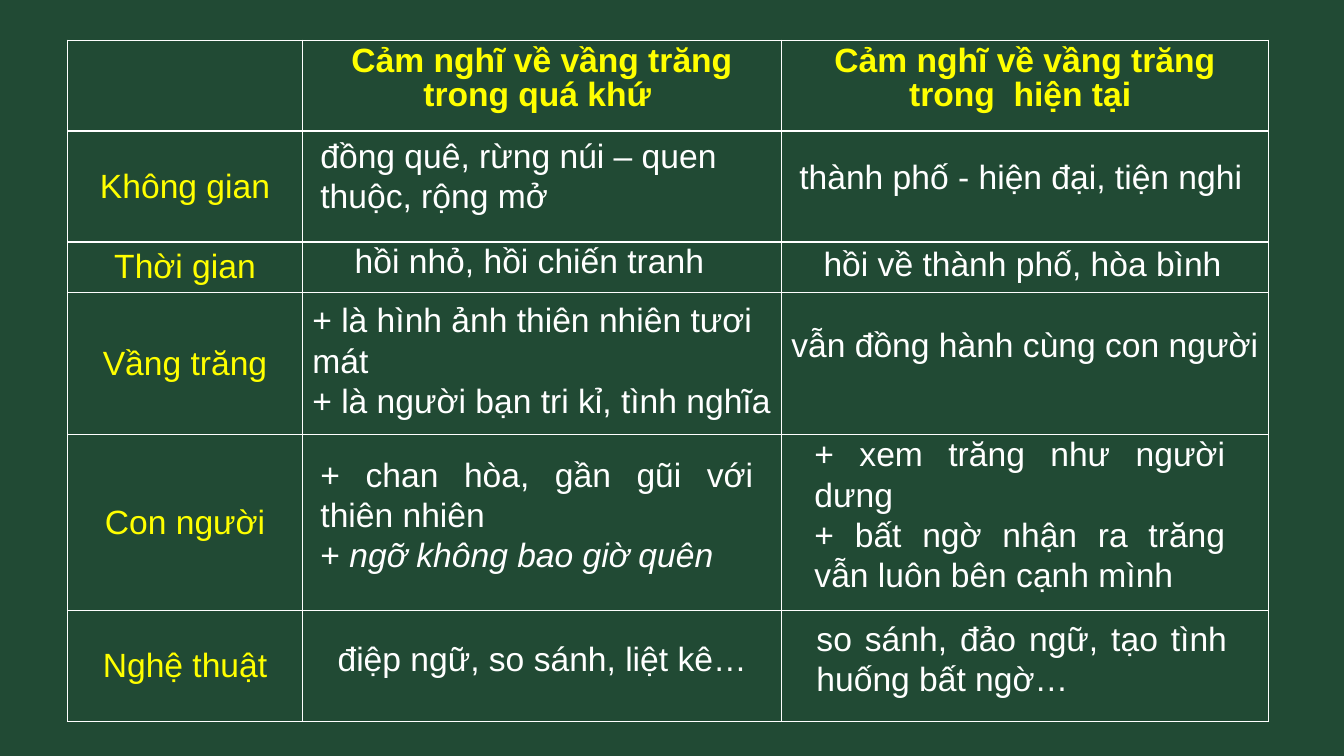
from lxml import etree
from pptx import Presentation
from pptx.dml.color import RGBColor
from pptx.enum.text import MSO_ANCHOR, MSO_AUTO_SIZE, PP_ALIGN
from pptx.oxml.ns import qn
from pptx.util import Pt

PX = 9144
COLORS = {"board": "214A34", "heading": "FFFF00", "chalk": "FFFFFF"}
FONT = "Arial"
TEXT_SIZE = 24
BORDER_WIDTH = 1

TABLE_LEFT, TABLE_TOP = 67, 40
COLUMN_WIDTHS = [233, 475, 483]
ROW_HEIGHTS = [90, 110, 50, 141, 175, 110]
COLUMN_HEADINGS = ["Cảm nghĩ về vầng trăng trong quá khứ ",
                   "Cảm nghĩ về vầng trăng trong  hiện tại "]
ROW_HEADINGS = ["Không gian", "Thời gian", "Vầng trăng", "Con người", "Nghệ thuật"]

LEFT, JUSTIFY = PP_ALIGN.LEFT, PP_ALIGN.JUSTIFY
NOTES = [
    ((308, 129, 467, 91), LEFT, ["đồng quê, rừng núi – quen thuộc, rộng mở"]),
    ((783, 150, 483, 50), LEFT, ["thành phố - hiện đại, tiện nghi"]),
    ((342, 233, 394, 50), LEFT, ["hồi nhỏ, hồi chiến tranh"]),
    ((807, 236, 476, 50), LEFT, ["hồi về thành phố, hòa bình"]),
    ((300, 292, 503, 131), LEFT, ["+ là hình ảnh thiên nhiên tươi mát",
                                  "+ là người bạn tri kỉ, tình nghĩa"]),
    ((775, 316, 492, 50), LEFT, ["vẫn đồng hành cùng con người"]),
    ((308, 445, 449, 131), JUSTIFY, ["+ chan hòa, gần gũi với thiên nhiên",
                                     ("+ ", "ngỡ không bao giờ quên")]),
    ((798, 425, 427, 172), JUSTIFY, ["+ xem trăng như người dưng",
                                     "+ bất ngờ nhận ra trăng vẫn luôn bên cạnh mình"]),
    ((325, 628, 429, 50), LEFT, ["điệp ngữ, so sánh, liệt kê…"]),
    ((800, 608, 427, 91), JUSTIFY, ["so sánh, đảo ngữ, tạo tình huống bất ngờ… "]),
]


def color(name):
    return RGBColor.from_string(COLORS[name])


def format_run(run, color_name, bold=False, italic=False):
    run.font.name = FONT
    run.font.size = Pt(TEXT_SIZE)
    run.font.color.rgb = color(color_name)
    run.font.bold = bold
    run.font.italic = italic


def add_borders(cell):
    properties = cell._tc.get_or_add_tcPr()
    for index, side in enumerate(("lnL", "lnR", "lnT", "lnB")):
        line = etree.Element(qn(f"a:{side}"), w=str(Pt(BORDER_WIDTH)))
        fill = etree.SubElement(line, qn("a:solidFill"))
        etree.SubElement(fill, qn("a:srgbClr"), val=COLORS["chalk"])
        properties.insert(index, line)


def set_heading(cell, text, bold):
    cell.text_frame.text = text
    paragraph = cell.text_frame.paragraphs[0]
    paragraph.alignment = PP_ALIGN.CENTER
    if bold:
        paragraph.line_spacing = 0.9
    else:
        cell.vertical_anchor = MSO_ANCHOR.MIDDLE
    format_run(paragraph.runs[0], "heading", bold)


def add_comparison_table(slide):
    frame = slide.shapes.add_table(
        len(ROW_HEIGHTS), len(COLUMN_WIDTHS), TABLE_LEFT * PX, TABLE_TOP * PX,
        sum(COLUMN_WIDTHS) * PX, sum(ROW_HEIGHTS) * PX)
    table = frame.table
    table.first_row = table.horz_banding = False
    for column, width in zip(table.columns, COLUMN_WIDTHS):
        column.width = width * PX
    for row, height in zip(table.rows, ROW_HEIGHTS):
        row.height = height * PX
    for cell in table.iter_cells():
        cell.fill.background()
        add_borders(cell)
    for index, text in enumerate(COLUMN_HEADINGS, 1):
        set_heading(table.cell(0, index), text, bold=True)
    for index, text in enumerate(ROW_HEADINGS, 1):
        set_heading(table.cell(index, 0), text, bold=False)


def add_note(slide, box, alignment, lines):
    text_frame = slide.shapes.add_textbox(*(length * PX for length in box)).text_frame
    text_frame.word_wrap = True
    text_frame.auto_size = MSO_AUTO_SIZE.SHAPE_TO_FIT_TEXT
    for index, line in enumerate(lines):
        paragraph = text_frame.add_paragraph() if index else text_frame.paragraphs[0]
        paragraph.alignment = alignment
        plain, *quoted = (line,) if isinstance(line, str) else line
        paragraph.text = plain
        format_run(paragraph.runs[0], "chalk")
        for text in quoted:
            run = paragraph.add_run()
            run.text = text
            format_run(run, "chalk", italic=True)


def main():
    presentation = Presentation()
    presentation.slide_width = 1333 * PX
    presentation.slide_height = 750 * PX
    slide = presentation.slides.add_slide(presentation.slide_layouts[6])
    slide.background.fill.solid()
    slide.background.fill.fore_color.rgb = color("board")
    add_comparison_table(slide)
    for box, alignment, lines in NOTES:
        add_note(slide, box, alignment, lines)
    presentation.save("out.pptx")


if __name__ == "__main__":
    main()
